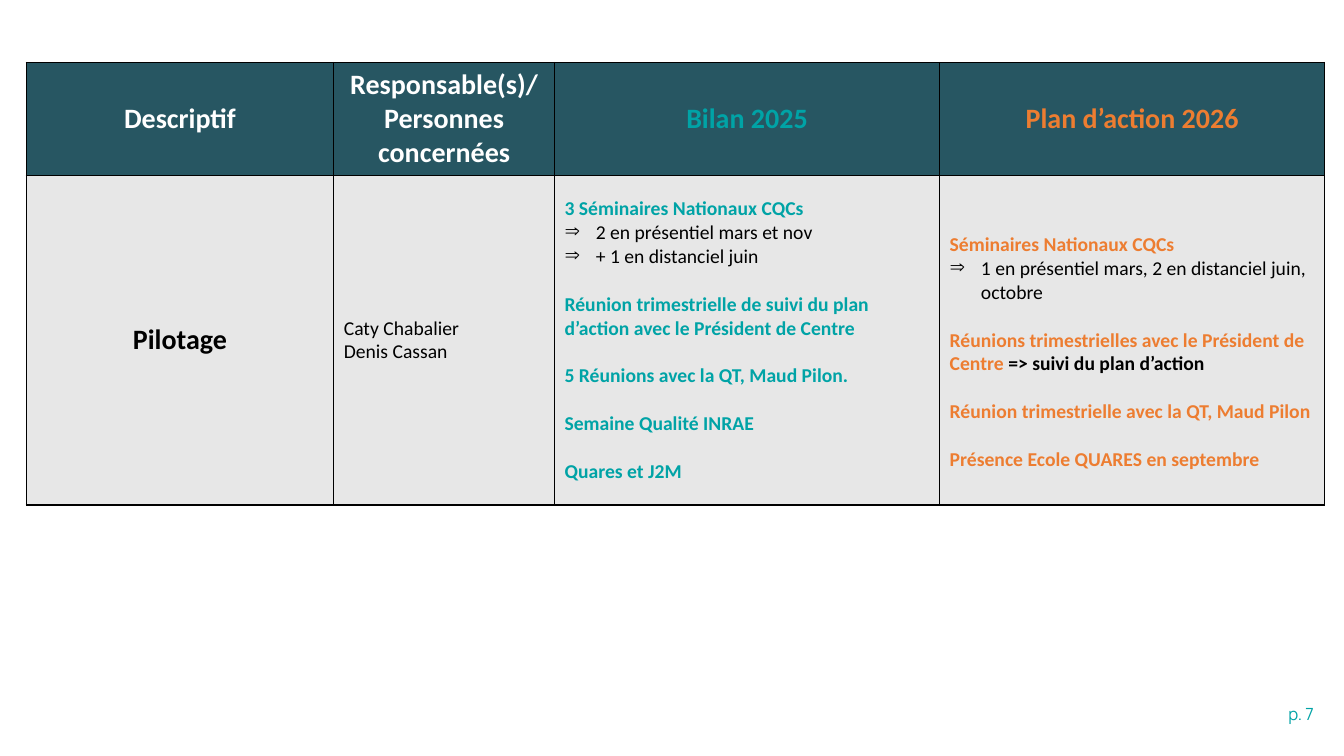
from dataclasses import dataclass

from lxml import etree
from pptx import Presentation
from pptx import util as u
from pptx.dml.color import RGBColor
from pptx.enum import text as t
from pptx.oxml import ns

HUES = {
    "teal": "00A3A6",
    "orange": "ED7D31",
    "navy": "275662",
    "grey": "E7E7E7",
    "white": "FFFFFF",
    "black": "000000",
}
LEFT, MID, RIGHT = t.PP_ALIGN.LEFT, t.PP_ALIGN.CENTER, t.PP_ALIGN.RIGHT
GAP = 17.1
WIDTHS = (3.05, 2.19, 3.82, 3.82)
HEIGHTS = (1.1, 3.27)


@dataclass(frozen=True)
class Run:
    words: str
    hue: str = "black"
    bold: bool = False
    size: int = 14
    font: str = "Calibri"


@dataclass(frozen=True)
class Line:
    runs: tuple[Run, ...]
    align: t.PP_ALIGN = LEFT
    bullet: bool = False
    gap: float = 0


@dataclass(frozen=True)
class Box:
    lines: tuple[Line, ...]
    fill: str = "grey"
    top: float = 0.05


def head(words: str, hue: str = "white") -> Line:
    return Line((Run(words, hue, True, 20),), MID)


def topic(words: str, hue: str, gap: float = GAP) -> Line:
    return Line((Run(words, hue, True),), gap=gap)


def plain(words: str, bullet: bool = False) -> Line:
    return Line((Run(words),), bullet=bullet)


def write(para, words: str, *, hue: str, bold: bool, size: int, font: str) -> None:
    run = para.add_run()
    run.text = words
    run.font.name = font
    run.font.size = u.Pt(size)
    run.font.bold = bold
    run.font.color.rgb = RGBColor.from_string(HUES[hue])


def add_tag(parent, tag: str, **attrs: str):
    return etree.SubElement(parent, ns.qn(tag), attrs)


def add_mark(para) -> None:
    props = para._p.get_or_add_pPr()
    props.set("marL", str(u.Inches(0.31)))
    props.set("indent", str(-u.Inches(0.31)))
    add_tag(add_tag(props, "a:buClr"), "a:srgbClr", val=HUES["black"])
    add_tag(props, "a:buChar", char="⇒")


def fill_text(frame, lines: tuple[Line, ...]) -> None:
    frame.word_wrap = True
    for i, line in enumerate(lines):
        para = frame.add_paragraph() if i else frame.paragraphs[0]
        if line.bullet:
            add_mark(para)
        para.alignment = line.align
        if line.gap:
            para.space_before = u.Pt(line.gap)
        for run in line.runs:
            write(para, run.words, hue=run.hue, bold=run.bold,
                  size=run.size, font=run.font)


def draw_cell(cell, box: Box) -> None:
    props = cell._tc.get_or_add_tcPr()
    for side in ("a:lnL", "a:lnR", "a:lnT", "a:lnB"):
        edge = add_tag(props, side, w=str(u.Pt(1)))
        add_tag(add_tag(edge, "a:solidFill"), "a:srgbClr", val=HUES["black"])
    cell.fill.solid()
    cell.fill.fore_color.rgb = RGBColor.from_string(HUES[box.fill])
    cell.vertical_anchor = t.MSO_ANCHOR.MIDDLE
    cell.margin_top = u.Inches(box.top)
    fill_text(cell.text_frame, box.lines)


def draw_grid(slide, rows: tuple[tuple[Box, ...], ...]) -> None:
    grid = slide.shapes.add_table(
        len(HEIGHTS), len(WIDTHS), u.Inches(0.26), u.Inches(0.62),
        u.Inches(sum(WIDTHS)), u.Inches(sum(HEIGHTS))).table
    for col, width in zip(grid.columns, WIDTHS):
        col.width = u.Inches(width)
    for row, height, boxes in zip(grid.rows, HEIGHTS, rows):
        row.height = u.Inches(height)
        for cell, box in zip(row.cells, boxes):
            draw_cell(cell, box)


HEADS = (
    Box((head("Descriptif"),), "navy"),
    Box((head("Responsable(s)/"), head("Personnes concernées")), "navy"),
    Box((head("Bilan 2025", "teal"),), "navy"),
    Box((head("Plan d’action 2026", "orange"),), "navy"),
)
STEER = (
    Box((head("Pilotage", "black"),)),
    Box((plain("Caty Chabalier"), plain("Denis Cassan"))),
    Box((
        topic("3 Séminaires Nationaux CQCs", "teal", 0),
        plain("2 en présentiel mars et nov", True),
        plain("+ 1 en distanciel juin", True),
        topic("Réunion trimestrielle de suivi du plan d’action avec le "
              "Président de Centre", "teal"),
        topic("5 Réunions avec la QT, Maud Pilon.", "teal"),
        topic("Semaine Qualité INRAE", "teal"),
        topic("Quares et J2M", "teal"),
    )),
    Box((
        topic("Séminaires Nationaux CQCs", "orange", 0),
        plain("1 en présentiel mars, 2 en distanciel juin, octobre", True),
        Line((
            Run("Réunions trimestrielles avec le Président de Centre ",
                "orange", True),
            Run("=> suivi du plan d’action", bold=True),
        ), gap=GAP),
        topic("Réunion trimestrielle avec la QT, Maud Pilon", "orange"),
        topic("Présence Ecole QUARES en septembre", "orange"),
    ), top=0.29),
)


def main() -> None:
    deck = Presentation()
    deck.slide_width, deck.slide_height = u.Inches(13.33), u.Inches(7.5)
    slide = deck.slides.add_slide(deck.slide_layouts[6])
    draw_grid(slide, (HEADS, STEER))
    page = slide.shapes.add_textbox(
        u.Inches(10.85), u.Inches(6.93), u.Inches(2.28), u.Inches(0.32))
    fill_text(page.text_frame,
              (Line((Run("p. 7", "teal", size=12, font="Manrope"),), RIGHT),))
    deck.save("out.pptx")


if __name__ == "__main__":
    main()
